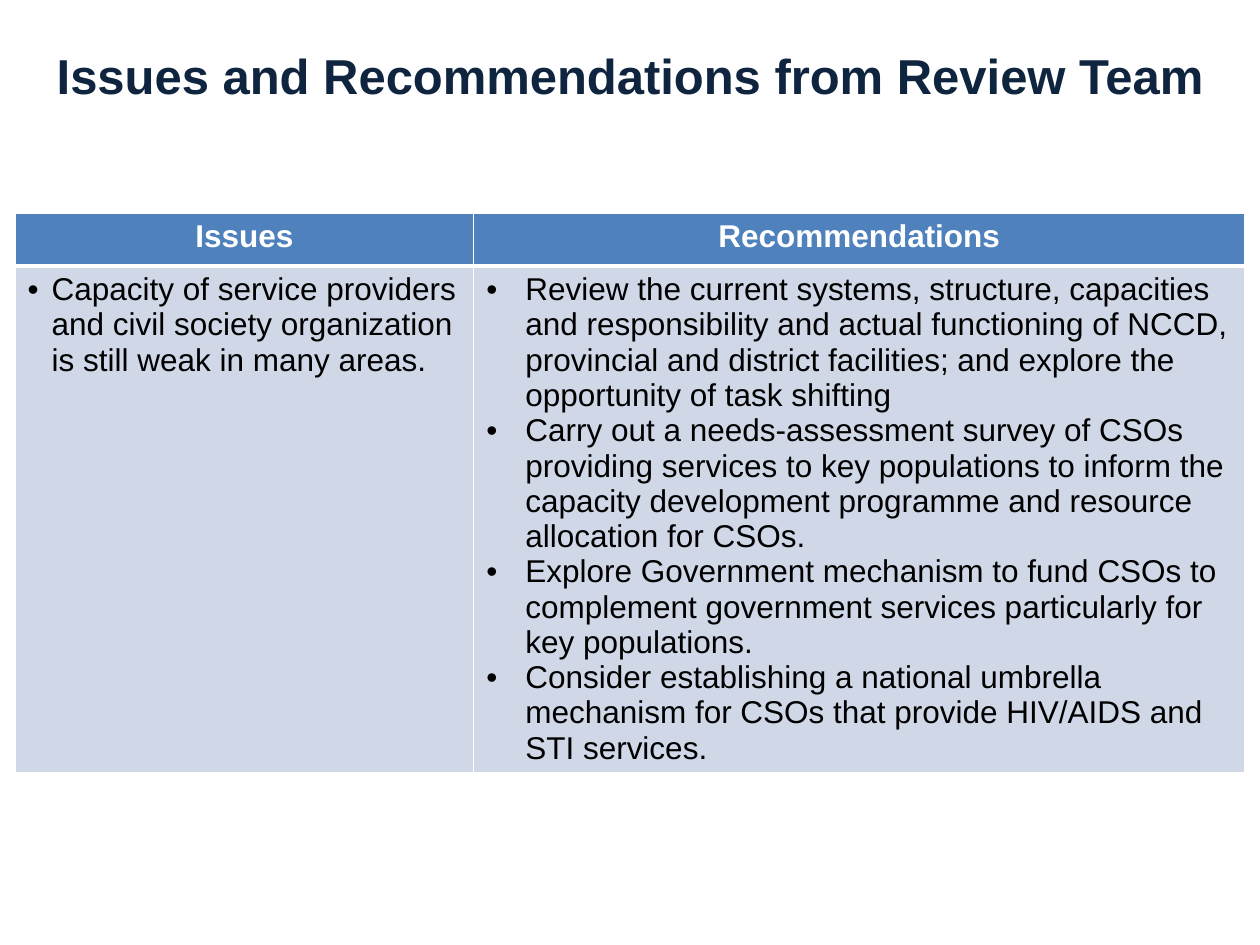
from lxml.etree import SubElement
from pptx import Presentation
from pptx.dml.color import RGBColor
from pptx.enum.text import MSO_ANCHOR, PP_ALIGN
from pptx.oxml.ns import qn
from pptx.util import Inches, Pt

FONT = "Arial"
WHITE = "FFFFFF"
BLACK = "000000"
NAVY = "0F243E"
HEADER_BLUE = "4F81BD"
BODY_BLUE = "D0D8E8"

COLUMN_WIDTHS = (3.64, 6.12)
ROW_HEIGHTS = (0.42, 4.02)
HEADINGS = ("Issues", "Recommendations")
ISSUES = ["Capacity of service providers and civil society organization is still weak in many areas."]
RECOMMENDATIONS = [
    "Review the current systems, structure, capacities and responsibility and actual functioning "
    "of NCCD, provincial and district facilities; and explore the opportunity of task shifting",
    "Carry out a needs-assessment survey of CSOs providing services to key populations to inform "
    "the capacity development programme and resource allocation for CSOs.",
    "Explore Government mechanism to fund CSOs to complement government services particularly "
    "for key populations.",
    "Consider establishing a national umbrella mechanism for CSOs that provide HIV/AIDS and "
    "STI services.",
]


def set_color(color_format, value):
    color_format.rgb = RGBColor.from_string(value)


def set_fill(fill, value):
    fill.solid()
    set_color(fill.fore_color, value)


def add_text(paragraph, text, size, color, bold=False):
    run = paragraph.add_run()
    run.text = text
    run.font.name = FONT
    run.font.size = Pt(size)
    run.font.bold = bold
    set_color(run.font.color, color)


def add_bullet(paragraph, indent):
    properties = paragraph._p.get_or_add_pPr()
    properties.set("marL", str(Inches(indent)))
    properties.set("indent", str(-Inches(indent)))
    SubElement(properties, qn("a:buFont"), typeface=FONT)
    SubElement(properties, qn("a:buChar"), char="•")


def set_borders(cell, top, bottom):
    properties = cell._tc.get_or_add_tcPr()
    for side, width in (("L", 1), ("R", 1), ("T", top), ("B", bottom)):
        line = SubElement(properties, qn(f"a:ln{side}"), w=str(Pt(width)))
        solid = SubElement(line, qn("a:solidFill"))
        SubElement(solid, qn("a:srgbClr"), val=WHITE)


def fill_header(cell, text):
    set_borders(cell, top=1, bottom=3)
    set_fill(cell.fill, HEADER_BLUE)
    paragraph = cell.text_frame.paragraphs[0]
    paragraph.alignment = PP_ALIGN.CENTER
    add_text(paragraph, text, 18, WHITE, bold=True)


def fill_body(cell, items, indent):
    set_borders(cell, top=3, bottom=1)
    set_fill(cell.fill, BODY_BLUE)
    frame = cell.text_frame
    for index, item in enumerate(items):
        paragraph = frame.add_paragraph() if index else frame.paragraphs[0]
        add_bullet(paragraph, indent)
        add_text(paragraph, item, 18, BLACK)


def place_title(slide, left, top, width, height):
    title = slide.shapes.title
    title.left, title.top = Inches(left), Inches(top)
    title.width, title.height = Inches(width), Inches(height)
    set_fill(title.fill, WHITE)
    frame = title.text_frame
    frame.vertical_anchor = MSO_ANCHOR.MIDDLE
    paragraph = frame.paragraphs[0]
    paragraph.alignment = PP_ALIGN.CENTER
    add_text(paragraph, "Issues and Recommendations from Review Team", 28, NAVY, bold=True)


def place_table(slide, left, top):
    table = slide.shapes.add_table(
        len(ROW_HEIGHTS), len(COLUMN_WIDTHS), Inches(left), Inches(top),
        Inches(sum(COLUMN_WIDTHS)), Inches(sum(ROW_HEIGHTS)),
    ).table
    for column, width in zip(table.columns, COLUMN_WIDTHS):
        column.width = Inches(width)
    for row, height in zip(table.rows, ROW_HEIGHTS):
        row.height = Inches(height)
    for index, heading in enumerate(HEADINGS):
        fill_header(table.cell(0, index), heading)
    fill_body(table.cell(1, 0), ISSUES, indent=0.19)
    fill_body(table.cell(1, 1), RECOMMENDATIONS, indent=0.31)


def main():
    presentation = Presentation()
    presentation.slide_width = Inches(10)
    presentation.slide_height = Inches(7.5)
    slide = presentation.slides.add_slide(presentation.slide_layouts[5])
    set_fill(slide.background.fill, WHITE)
    place_table(slide, 0.12, 1.69)
    place_title(slide, 0, -0.03, 10, 1.25)
    presentation.save("out.pptx")


if __name__ == "__main__":
    main()
